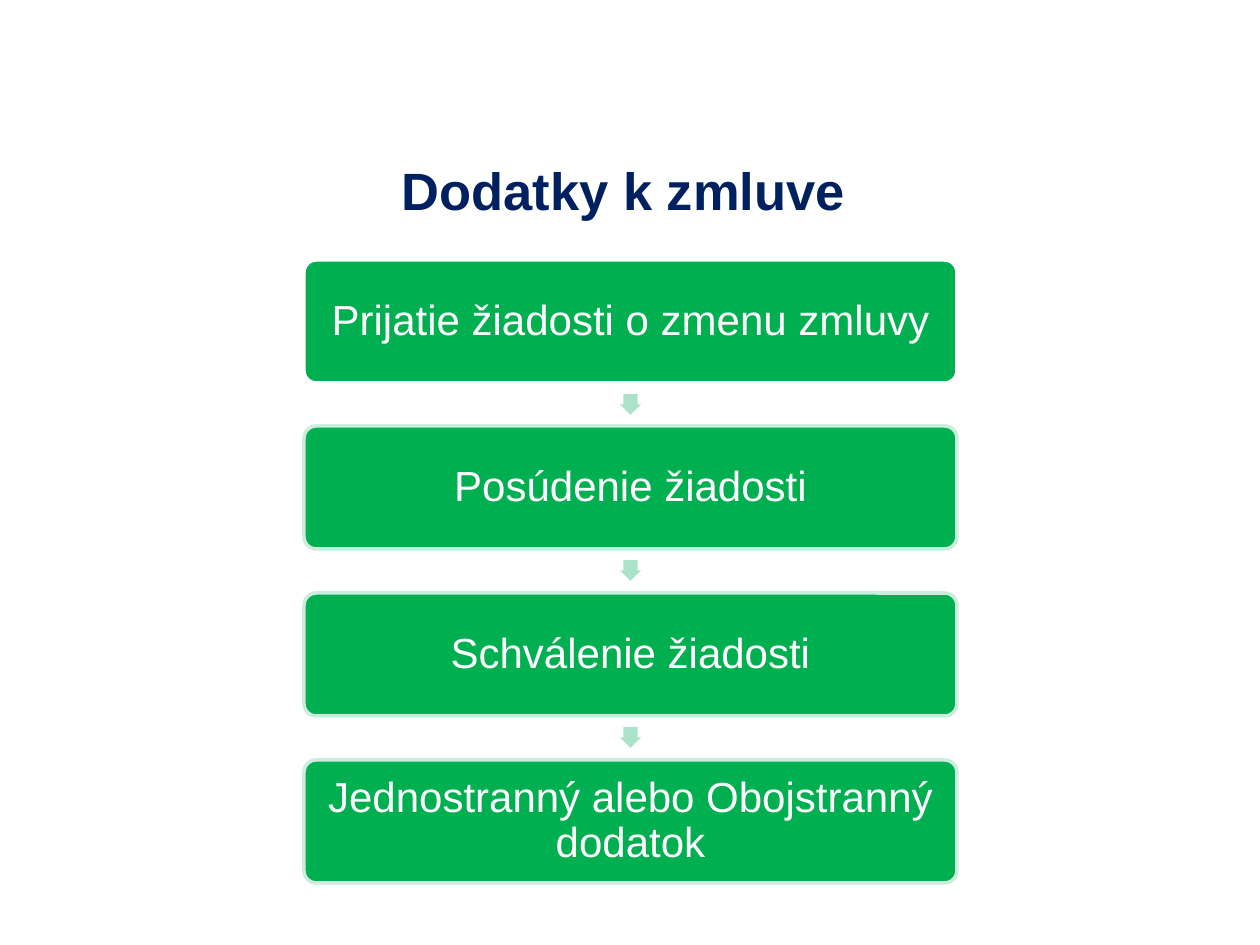
from dataclasses import dataclass

from pptx import Presentation
from pptx.dml.color import RGBColor
from pptx.enum.shapes import MSO_SHAPE
from pptx.enum.text import MSO_ANCHOR, PP_ALIGN
from pptx.util import Pt

PX = 914400 // 126
ROUND, ARROW = MSO_SHAPE.ROUNDED_RECTANGLE, MSO_SHAPE.RIGHT_ARROW
MIDDLE, CENTER = MSO_ANCHOR.MIDDLE, PP_ALIGN.CENTER

WHITE, NAVY, GREEN = "FFFFFF", "002060", "00B050"
MINT, PALE = "ABE2CA", "CCECDE"

# Flow layout in px: four steps, 500 px from the first top to the last
LEFT, TOP, WIDE, HIGH, SPAN = 304, 260, 653, 123, 500
TIP, DROP = 21, 134  # arrow size, and its distance below the step's top


@dataclass
class Step:
    text: str
    edge: str = PALE


STEPS = [
    Step("Prijatie žiadosti o zmenu zmluvy", WHITE),
    Step("Posúdenie žiadosti"),
    Step("Schválenie žiadosti"),
    Step("Jednostranný alebo Obojstranný dodatok"),
]


def color(code: str) -> RGBColor:
    return RGBColor.from_string(code)


def place(*sizes: int) -> list[int]:
    return [size * PX for size in sizes]


def write(shape, text: str, size: int, code: str, bold: bool = False) -> None:
    frame = shape.text_frame
    form = dict(word_wrap=True, vertical_anchor=MIDDLE, margin_left=0,
                margin_right=0, margin_top=0, margin_bottom=0)
    for key, value in form.items():
        setattr(frame, key, value)
    para = frame.paragraphs[0]
    para.alignment = CENTER
    run = para.add_run()
    run.text = text
    for key, value in dict(name="Arial", size=Pt(size), bold=bold).items():
        setattr(run.font, key, value)
    run.font.color.rgb = color(code)


def draw(slide, kind, box: list[int], fill: str):
    shape = slide.shapes.add_shape(kind, *box)
    shape.shadow.inherit = False
    shape.fill.solid()
    shape.fill.fore_color.rgb = color(fill)
    shape.line.fill.background()
    return shape


def add_step(slide, step: Step, top: int) -> None:
    shape = draw(slide, ROUND, place(LEFT, top, WIDE, HIGH), GREEN)
    shape.adjustments[0] = 0.1
    shape.line.color.rgb = color(step.edge)
    shape.line.width = Pt(2)
    write(shape, step.text, 24, WHITE)
    shape.text_frame.paragraphs[0].line_spacing = 0.9


def add_arrow(slide, top: int) -> None:
    left = LEFT + (WIDE - TIP) // 2
    shape = draw(slide, ARROW, place(left, top, TIP, TIP), MINT)
    shape.rotation = 90
    shape.adjustments[0] = 0.67


def main() -> None:
    deck = Presentation()
    deck.slide_width, deck.slide_height = place(1260, 945)
    slide = deck.slides.add_slide(deck.slide_layouts[6])

    # Title
    title = slide.shapes.add_textbox(*place(88, 155, 1071, 69))
    write(title, "Dodatky k zmluve", 30, NAVY, bold=True)

    # Steps with an arrow after each but the last
    last = len(STEPS) - 1
    for i, step in enumerate(STEPS):
        top = TOP + SPAN * i // last
        add_step(slide, step, top)
        if i < last:
            add_arrow(slide, top + DROP)

    deck.save("out.pptx")


if __name__ == "__main__":
    main()
